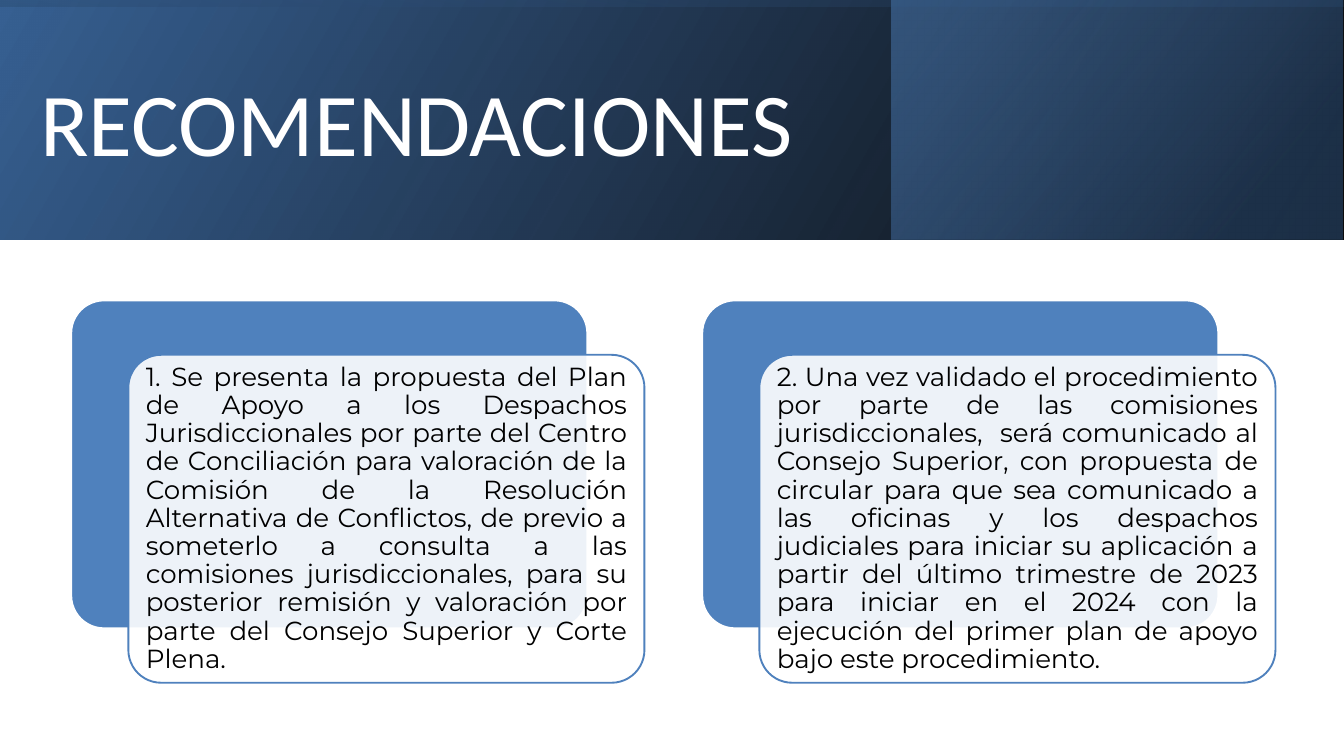
from dataclasses import dataclass

from lxml.etree import SubElement
from pptx import Presentation
from pptx.dml.color import RGBColor as RGB
from pptx.enum.shapes import MSO_SHAPE as SHAPE
from pptx.enum.text import MSO_ANCHOR as ANCHOR, MSO_AUTO_SIZE as AUTO, PP_ALIGN as ALIGN
from pptx.oxml.ns import qn
from pptx.util import Inches, Pt


@dataclass(frozen=True)
class Theme:
    white: str = "FFFFFF"
    black: str = "000000"
    blue: str = "4F81BD"
    mid_blue: str = "376092"
    navy: str = "254061"
    title_font: str = "Calibri"
    body_font: str = "Montserrat"
    title_size: int = 96
    body_size: int = 28
    line_width: int = 2


@dataclass(frozen=True)
class Box:
    left: float
    top: float
    width: float
    height: float

    def shifted(self, dx: float, dy: float) -> "Box":
        return Box(self.left + dx, self.top + dy, self.width, self.height)

    def inset(self, d: float) -> "Box":
        return Box(self.left + d, self.top + d, self.width - 2 * d, self.height - 2 * d)

    def lengths(self) -> tuple:
        return tuple(Inches(v) for v in (self.left, self.top, self.width, self.height))


@dataclass(frozen=True)
class Stop:
    pos: int
    color: str
    opacity: int


@dataclass(frozen=True)
class Band:
    box: Box
    stops: tuple
    angle: int
    rotation: int = 0


T = Theme()
BANNER_H = 3.56
BANDS = (
    Band(Box(0, 0, 20, BANNER_H), (Stop(0, T.black, 96), Stop(100, T.mid_blue, 100)), 330),
    Band(Box(13.26, 0, 6.72, BANNER_H), (Stop(19, T.navy, 68), Stop(100, T.blue, 48)), 320),
    Band(Box(8.22, -8.22, BANNER_H, 20), (Stop(23, T.mid_blue, 16), Stop(99, T.black, 45)), 350, 270),
)
TITLE_BOX = Box(0.5, 1.12, 13.26, 1.56)
CARD = Box(1.06, 4.47, 7.68, 4.88)
CARD_PITCH = 9.39
PANEL_SHIFT = (0.85, 0.81)
TEXT_INSET = 0.14
RECOMMENDATIONS = (
    "1. Se presenta la propuesta del Plan de Apoyo a los Despachos Jurisdiccionales por parte "
    "del Centro de Conciliación para valoración de la Comisión de la Resolución Alternativa de "
    "Conflictos, de previo a someterlo a consulta a las comisiones jurisdiccionales, para su "
    "posterior remisión y valoración por parte del Consejo Superior y Corte Plena.",
    "2. Una vez validado el procedimiento por parte de las comisiones jurisdiccionales,  será "
    "comunicado al Consejo Superior, con propuesta de circular para que sea comunicado a las "
    "oficinas y los despachos judiciales para iniciar su aplicación a partir del último trimestre "
    "de 2023 para iniciar en el 2024 con la ejecución del primer plan de apoyo bajo este "
    "procedimiento.",
)


def apply(obj, **values) -> None:
    for name, value in values.items():
        setattr(obj, name, value)


def place(sp, box: Box) -> None:
    apply(sp, **dict(zip(("left", "top", "width", "height"), box.lengths())))


def add_alpha(color_el, opacity: int) -> None:
    SubElement(color_el, qn("a:alpha"), val=str(opacity * 1000))


def draw_band(slide, band: Band) -> None:
    sp = slide.shapes.add_shape(SHAPE.RECTANGLE, *band.box.lengths())
    sp.shadow.inherit = False
    sp.rotation = band.rotation
    sp.element.spPr.find(qn("a:xfrm")).set("flipH", "1")
    sp.line.fill.background()
    sp.fill.gradient()
    grad = sp.element.spPr.find(qn("a:gradFill"))
    for child in list(grad):
        grad.remove(child)
    stop_list = SubElement(grad, qn("a:gsLst"))
    for stop in band.stops:
        gs = SubElement(stop_list, qn("a:gs"), pos=str(stop.pos * 1000))
        add_alpha(SubElement(gs, qn("a:srgbClr"), val=stop.color), stop.opacity)
    SubElement(grad, qn("a:lin"), ang=str(band.angle * 60000), scaled="0")


def draw_panel(slide, box: Box, fill: str, line: str, opacity: int = 100) -> None:
    sp = slide.shapes.add_shape(SHAPE.ROUNDED_RECTANGLE, *box.lengths())
    sp.adjustments[0] = 0.1
    sp.shadow.inherit = False
    sp.fill.solid()
    sp.fill.fore_color.rgb = RGB.from_string(fill)
    add_alpha(sp.element.spPr.find(f"{qn('a:solidFill')}/{qn('a:srgbClr')}"), opacity)
    sp.line.color.rgb = RGB.from_string(line)
    sp.line.width = Pt(T.line_width)


def write(slide, sp, box: Box, text: str, frame: dict, para: dict, font: dict, color: str) -> None:
    """Fill a placeholder and bring it in front of the shapes drawn so far."""
    place(sp, box)
    slide.shapes.element.append(sp.element)
    tf = sp.text_frame
    apply(tf, word_wrap=True, vertical_anchor=ANCHOR.MIDDLE, **frame)
    p = tf.paragraphs[0]
    apply(p, line_spacing=0.9, space_before=Pt(0), **para)
    r = p.add_run()
    r.text = text
    apply(r.font, **font)
    r.font.color.rgb = RGB.from_string(color)


def draw_card(slide, sp, box: Box, text: str) -> None:
    panel = box.shifted(*PANEL_SHIFT)
    draw_panel(slide, box, T.blue, T.white)
    draw_panel(slide, panel, T.white, T.blue, opacity=90)
    margins = {f"margin_{side}": Inches(0.12) for side in ("left", "top", "right", "bottom")}
    write(slide, sp, panel.inset(TEXT_INSET), text,
          frame=dict(auto_size=AUTO.NONE, **margins),
          para=dict(alignment=ALIGN.JUSTIFY, space_after=Pt(10)),
          font=dict(name=T.body_font, size=Pt(T.body_size)), color=T.black)
    # Plain paragraph: no bullet, no hanging indent
    pPr = sp.text_frame.paragraphs[0]._p.get_or_add_pPr()
    pPr.set("marL", "0")
    pPr.set("indent", "0")
    SubElement(pPr, qn("a:buNone"))


def main() -> None:
    prs = Presentation()
    apply(prs, slide_width=Inches(20), slide_height=Inches(11.25))
    s = prs.slides.add_slide(prs.slide_layouts[3])
    title, *bodies = list(s.placeholders)

    # Banner
    for band in BANDS:
        draw_band(s, band)

    # Recommendation cards
    for i, (body, text) in enumerate(zip(bodies, RECOMMENDATIONS)):
        draw_card(s, body, CARD.shifted(i * CARD_PITCH, 0), text)

    # Title
    write(s, title, TITLE_BOX, "RECOMENDACIONES",
          frame=dict(auto_size=AUTO.SHAPE_TO_FIT_TEXT),
          para=dict(alignment=ALIGN.LEFT, space_after=Pt(6)),
          font=dict(name=T.title_font, size=Pt(T.title_size)), color=T.white)

    prs.save("out.pptx")


if __name__ == "__main__":
    main()
